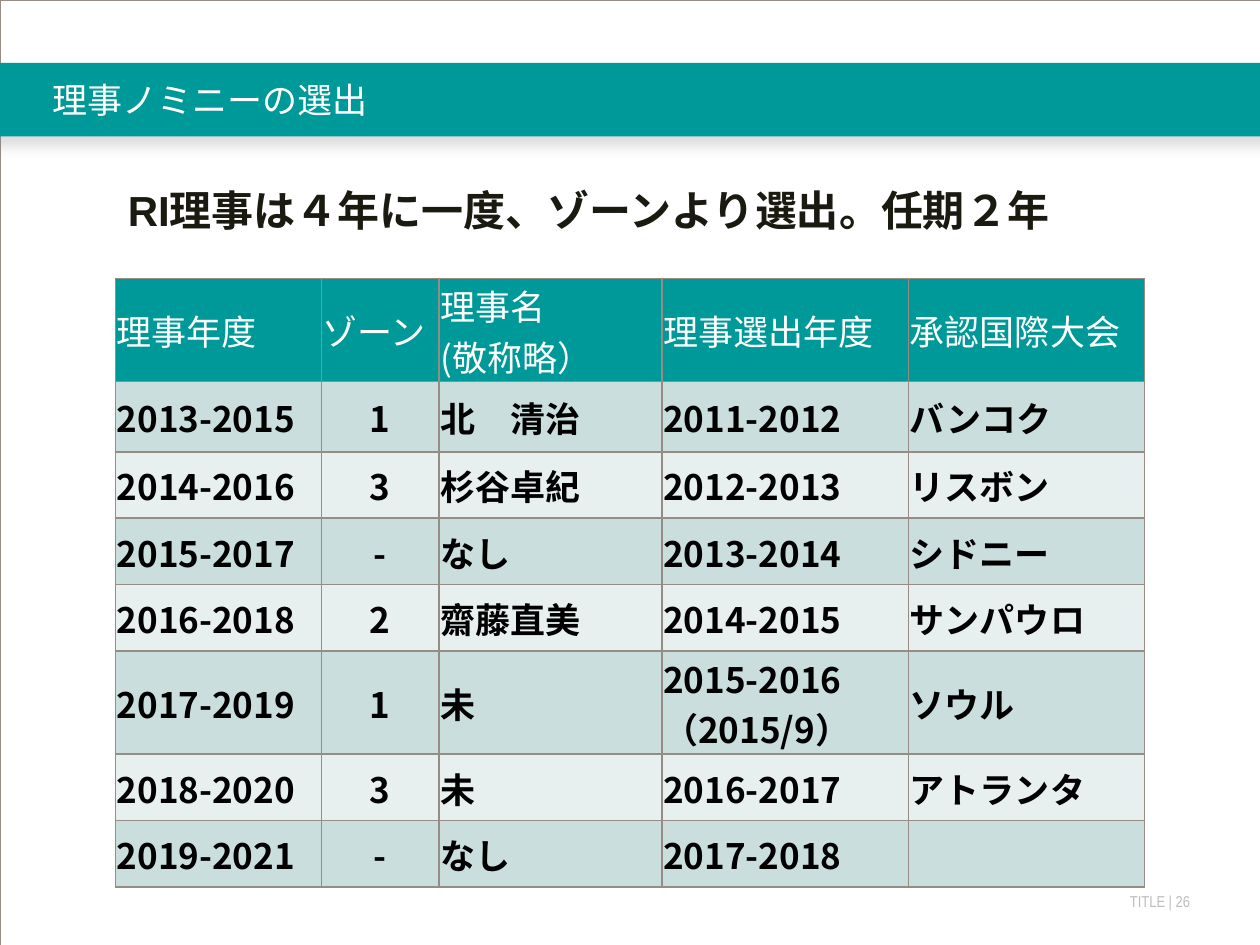
from dataclasses import dataclass

from lxml.etree import SubElement
from pptx import Presentation
from pptx.dml.color import RGBColor
from pptx.enum.shapes import MSO_SHAPE as Shape
from pptx.enum.text import MSO_ANCHOR as Anchor, PP_ALIGN as Align
from pptx.oxml.ns import qn
from pptx.util import Pt


@dataclass(frozen=True)
class Theme:
    teal: str = "009999"
    band_dark: str = "CBDEDE"
    band_light: str = "E7EFEF"
    border: str = "958D85"
    white: str = "FFFFFF"
    black: str = "000000"
    ink: str = "1B1A11"
    footer: str = "BCBDC0"
    shadow: str = "808080"
    heading_font: str = "Arial"
    narrow_font: str = "Arial Narrow"
    table_font: str = "Noto Sans CJK JP"
    heading_size: int = 24
    body_size: int = 20
    footer_size: int = 9


def color(value):
    return RGBColor.from_string(value)


def write_text(frame, text, *, font, size, fill, east="Noto Sans CJK JP",
               bold=False, align=Align.LEFT):
    for index, line in enumerate(text.split("\n")):
        para = frame.paragraphs[0] if index == 0 else frame.add_paragraph()
        para.text = line
        para.alignment = align
        for span in para.runs:
            span.font.name = font
            span.font.size = Pt(size)
            span.font.bold = bold
            span.font.color.rgb = color(fill)
            SubElement(span.font._element, qn("a:ea"), typeface=east)


class SlideBuilder:
    def __init__(self, page, theme):
        self.page = page
        self.theme = theme

    def rectangle(self, left, top, width, height, fill=None, line=None, line_width=1):
        box = self.page.shapes.add_shape(
            Shape.RECTANGLE, Pt(left), Pt(top), Pt(width), Pt(height))
        box.shadow.inherit = False
        if fill:
            box.fill.solid()
            box.fill.fore_color.rgb = color(fill)
        else:
            box.fill.background()
        if line:
            box.line.color.rgb = color(line)
            box.line.width = Pt(line_width)
        else:
            box.line.fill.background()
        return box

    def drop_shadow(self, box, blur, distance, opacity):
        effects = box._element.spPr.find(qn("a:effectLst"))
        shadow = SubElement(effects, qn("a:outerShdw"), blurRad=str(Pt(blur)),
                            dist=str(Pt(distance)), dir="5400000",
                            algn="t", rotWithShape="0")
        tint = SubElement(shadow, qn("a:srgbClr"), val=self.theme.shadow)
        SubElement(tint, qn("a:alpha"), val=str(opacity * 1000))

    def text(self, text, left, top, width, height, *, insets=(0, 0, 0, 0),
             anchor=Anchor.TOP, **style):
        box = self.page.shapes.add_textbox(Pt(left), Pt(top), Pt(width), Pt(height))
        frame = box.text_frame
        frame.word_wrap = True
        frame.vertical_anchor = anchor
        (frame.margin_left, frame.margin_top,
         frame.margin_right, frame.margin_bottom) = map(Pt, insets)
        write_text(frame, text, **style)

    def cell_borders(self, cell):
        properties = cell._tc.get_or_add_tcPr()
        for side in ("lnL", "lnR", "lnT", "lnB"):
            edge = SubElement(properties, qn(f"a:{side}"), w=str(Pt(1)))
            paint = SubElement(edge, qn("a:solidFill"))
            SubElement(paint, qn("a:srgbClr"), val=self.theme.border)

    def table(self, rows, left, top, widths, heights, centered):
        theme = self.theme
        table = self.page.shapes.add_table(
            len(rows), len(widths), Pt(left), Pt(top),
            Pt(sum(widths)), Pt(sum(heights))).table
        for column, width in zip(table.columns, widths):
            column.width = Pt(width)
        for r, (values, height) in enumerate(zip(rows, heights)):
            table.rows[r].height = Pt(height)
            header = r == 0
            band = theme.band_dark if r % 2 else theme.band_light
            for c, value in enumerate(values):
                cell = table.cell(r, c)
                cell.vertical_anchor = Anchor.MIDDLE
                cell.margin_left = cell.margin_right = cell.margin_top = Pt(0.7)
                cell.margin_bottom = Pt(0)
                self.cell_borders(cell)
                cell.fill.solid()
                cell.fill.fore_color.rgb = color(theme.teal if header else band)
                write_text(cell.text_frame, value, font=theme.table_font,
                           size=theme.body_size, bold=not header,
                           fill=theme.white if header else theme.black,
                           align=Align.CENTER if c == centered and not header
                           else Align.LEFT)


def main():
    theme = Theme()
    deck = Presentation()
    deck.slide_width, deck.slide_height = Pt(720), Pt(540)
    page = deck.slides.add_slide(deck.slide_layouts[6])
    builder = SlideBuilder(page, theme)

    builder.text("TITLE | 26", 558, 509.8, 126, 10.8, insets=(0, 0, 4, 0),
                 font=theme.narrow_font, size=theme.footer_size,
                 fill=theme.footer, align=Align.RIGHT)
    builder.rectangle(0, 0, 720, 540, line=theme.border, line_width=0.13)
    title_band = builder.rectangle(-6, 36, 732, 42, fill=theme.teal)
    builder.drop_shadow(title_band, blur=7, distance=4.8, opacity=25)
    builder.text("理事ノミニーの選出", 30, 36, 690, 42, anchor=Anchor.MIDDLE,
                 font=theme.narrow_font, size=theme.body_size, fill=theme.white)

    rows = [
        ("理事年度", "ゾーン", "理事名\v(敬称略）", "理事選出年度", "承認国際大会"),
        ("2013-2015", "1", "北　清治", "2011-2012", "バンコク"),
        ("2014-2016", "3", "杉谷卓紀", "2012-2013", "リスボン"),
        ("2015-2017", "-", "なし", "2013-2014", "シドニー"),
        ("2016-2018", "2", "齋藤直美", "2014-2015", "サンパウロ"),
        ("2017-2019", "1", "未", "2015-2016\n（2015/9）", "ソウル"),
        ("2018-2020", "3", "未", "2016-2017", "アトランタ"),
        ("2019-2021", "-", "なし", "2017-2018", ""),
    ]
    single, first, double = 38, 40.3, 58.7
    builder.table(rows, 66, 159.2, widths=[117.6, 67.4, 127.3, 141, 134.7],
                  heights=[double, first] + [single] * 3 + [double] + [single] * 2,
                  centered=1)
    builder.text("RI理事は４年に一度、ゾーンより選出。任期２年", 66, 102, 588, 36,
                 insets=(7.2, 3.6, 7.2, 3.6), font=theme.heading_font,
                 size=theme.heading_size, fill=theme.ink, bold=True)
    deck.save("out.pptx")


if __name__ == "__main__":
    main()
